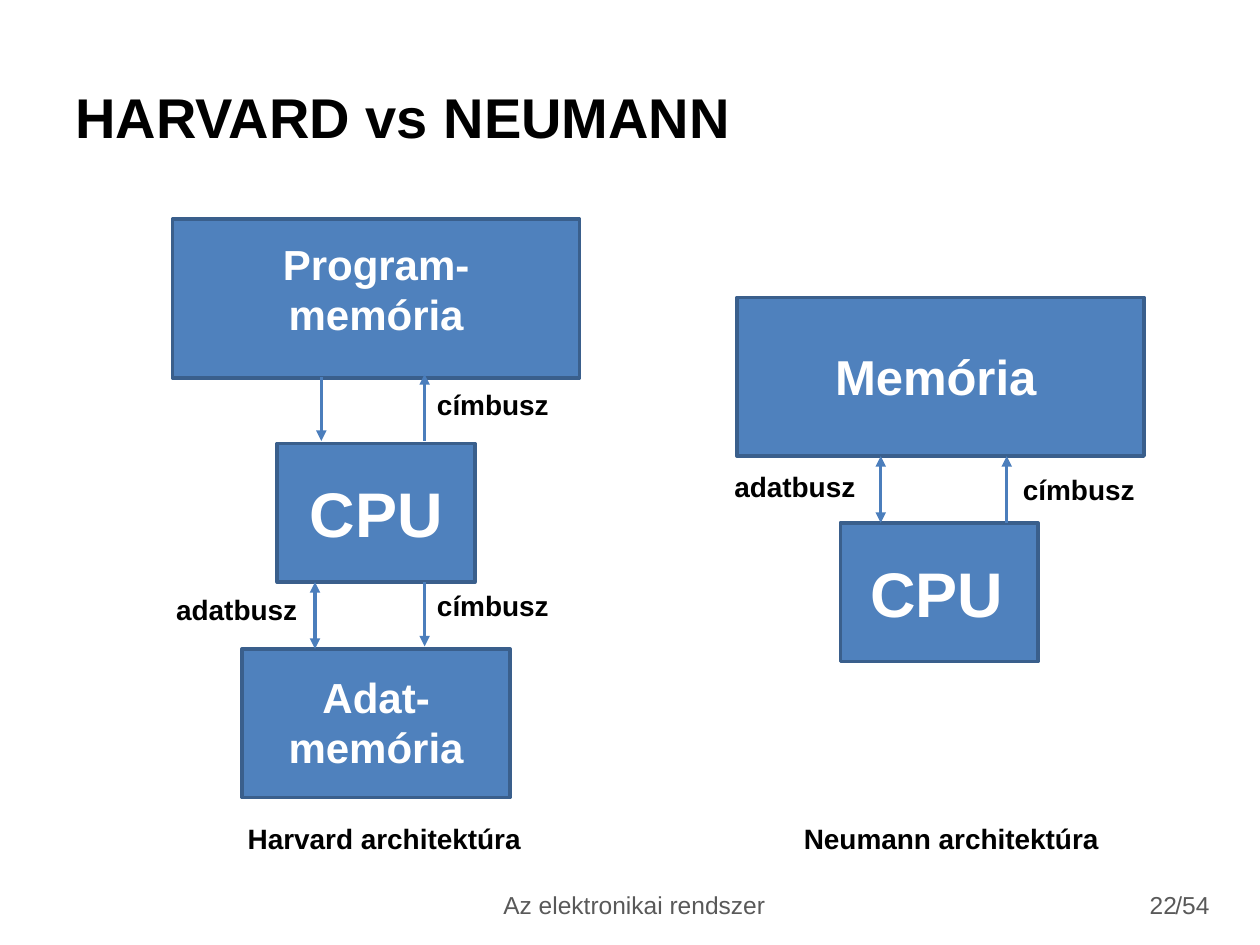
from dataclasses import dataclass

import pptx
import pptx.util
from lxml import etree
from pptx.dml.color import RGBColor
from pptx.enum.shapes import MSO_CONNECTOR, MSO_SHAPE
from pptx.enum.text import MSO_ANCHOR, PP_ALIGN
from pptx.oxml.ns import qn
from pptx.slide import Slide
from pptx.util import Inches

BLACK = RGBColor(0x00, 0x00, 0x00)
WHITE = RGBColor(0xFF, 0xFF, 0xFF)
GREY = RGBColor(0x59, 0x59, 0x59)
BLOCK_FILL = RGBColor(0x4F, 0x81, 0xBD)
BLOCK_LINE = RGBColor(0x3A, 0x5F, 0x8C)
BUS_LINE = RGBColor(0x4B, 0x7E, 0xBC)
LEFT, CENTER, RIGHT = PP_ALIGN.LEFT, PP_ALIGN.CENTER, PP_ALIGN.RIGHT


@dataclass(frozen=True)
class Label:
    text: str
    left: float
    top: float
    width: float
    height: float
    size: int
    color: RGBColor = BLACK
    align: PP_ALIGN = LEFT
    anchor: MSO_ANCHOR = MSO_ANCHOR.TOP
    bold: bool = True
    wrap: bool = True


@dataclass(frozen=True)
class Block:
    left: float
    top: float
    width: float
    height: float
    caption: Label


@dataclass(frozen=True)
class Bus:
    """A vertical bus whose arrowhead points at tip."""
    x: float
    tip: float
    end: float
    both_ways: bool = False


def cpu(left: float, top: float, caption_left: float) -> Block:
    caption = Label("CPU", caption_left, top + 0.2, 1.57, 0.71, 36, WHITE, CENTER)
    return Block(left, top, 1.57, 1.1, caption)


def bus_label(text: str, left: float, top: float) -> Label:
    return Label(text, left, top, 1.26, 0.4, 16)


def footer(text: str, left: float, width: float, align: PP_ALIGN, wrap: bool = True) -> Label:
    return Label(text, left, 6.98, width, 0.4, 14, GREY, align,
                 MSO_ANCHOR.MIDDLE, bold=False, wrap=wrap)


BLOCKS = [
    cpu(2.2, 3.52, 2.2),
    Block(1.37, 1.74, 3.23, 1.26,
          Label("Program-\vmemória", 2.04, 1.84, 1.89, 0.91, 24, WHITE, CENTER)),
    Block(1.92, 5.15, 2.13, 1.18,
          Label("Adat-\vmemória", 1.92, 5.28, 2.13, 0.91, 24, WHITE, CENTER)),
    cpu(6.67, 4.15, 6.65),
    Block(5.85, 2.36, 3.23, 1.26,
          Label("Memória", 6.53, 2.7, 1.87, 0.57, 28, WHITE)),
]

BUSES = [
    Bus(2.55, 3.5, 2.99),
    Bus(3.37, 2.97, 3.5),
    Bus(2.5, 4.62, 5.15, both_ways=True),
    Bus(3.37, 5.13, 4.62),
    Bus(6.99, 3.62, 4.15, both_ways=True),
    Bus(7.99, 3.62, 4.15),
]

LABELS = [
    Label("HARVARD vs NEUMANN", 0.5, 0.3, 9, 1.25, 32, anchor=MSO_ANCHOR.MIDDLE),
    bus_label("címbusz", 3.37, 3.03),
    bus_label("adatbusz", 1.3, 4.65),
    bus_label("címbusz", 3.37, 4.62),
    bus_label("adatbusz", 5.73, 3.68),
    bus_label("címbusz", 8.02, 3.7),
    Label("Harvard architektúra", 0.47, 6.47, 5.16, 0.37, 16, align=CENTER),
    Label("Neumann architektúra", 5.75, 6.47, 3.6, 0.37, 16, align=CENTER),
    footer("Az elektronikai rendszer", 2.81, 4.45, CENTER),
    footer("22", 8.03, 1.41, RIGHT),
    footer("/54", 9.23, 0.47, LEFT, wrap=False),
]


def draw_label(slide: Slide, label: Label) -> None:
    box = slide.shapes.add_textbox(Inches(label.left), Inches(label.top),
                                   Inches(label.width), Inches(label.height))
    frame = box.text_frame
    frame.word_wrap = label.wrap
    frame.vertical_anchor = label.anchor
    paragraph = frame.paragraphs[0]
    paragraph.text = label.text
    paragraph.alignment = label.align
    for run in paragraph.runs:
        run.font.name = "Arial"
        run.font.size = pptx.util.Pt(label.size)
        run.font.bold = label.bold
        run.font.color.rgb = label.color


def draw_block(slide: Slide, block: Block) -> None:
    rectangle = slide.shapes.add_shape(
        MSO_SHAPE.RECTANGLE, Inches(block.left), Inches(block.top),
        Inches(block.width), Inches(block.height))
    rectangle.shadow.inherit = False
    rectangle.fill.solid()
    rectangle.fill.fore_color.rgb = BLOCK_FILL
    rectangle.line.color.rgb = BLOCK_LINE
    rectangle.line.width = pptx.util.Pt(2)
    draw_label(slide, block.caption)


def draw_bus(slide: Slide, bus: Bus) -> None:
    arrow = slide.shapes.add_connector(MSO_CONNECTOR.STRAIGHT, Inches(bus.x), Inches(bus.tip),
                                       Inches(bus.x), Inches(bus.end))
    arrow.line.color.rgb = BUS_LINE
    arrow.line.width = pptx.util.Pt(2)
    properties = arrow.element.spPr
    outline = properties.find(qn("a:ln"))
    for tag in ("a:headEnd", "a:tailEnd") if bus.both_ways else ("a:headEnd",):
        etree.SubElement(outline, qn(tag), type="triangle")
    etree.SubElement(properties, qn("a:effectLst"))


def main() -> None:
    presentation = pptx.Presentation()
    presentation.slide_width = Inches(10)
    presentation.slide_height = Inches(7.5)
    slide = presentation.slides.add_slide(presentation.slide_layouts[6])
    for block in BLOCKS:
        draw_block(slide, block)
    for bus in BUSES:
        draw_bus(slide, bus)
    for label in LABELS:
        draw_label(slide, label)
    presentation.save("out.pptx")


if __name__ == "__main__":
    main()
